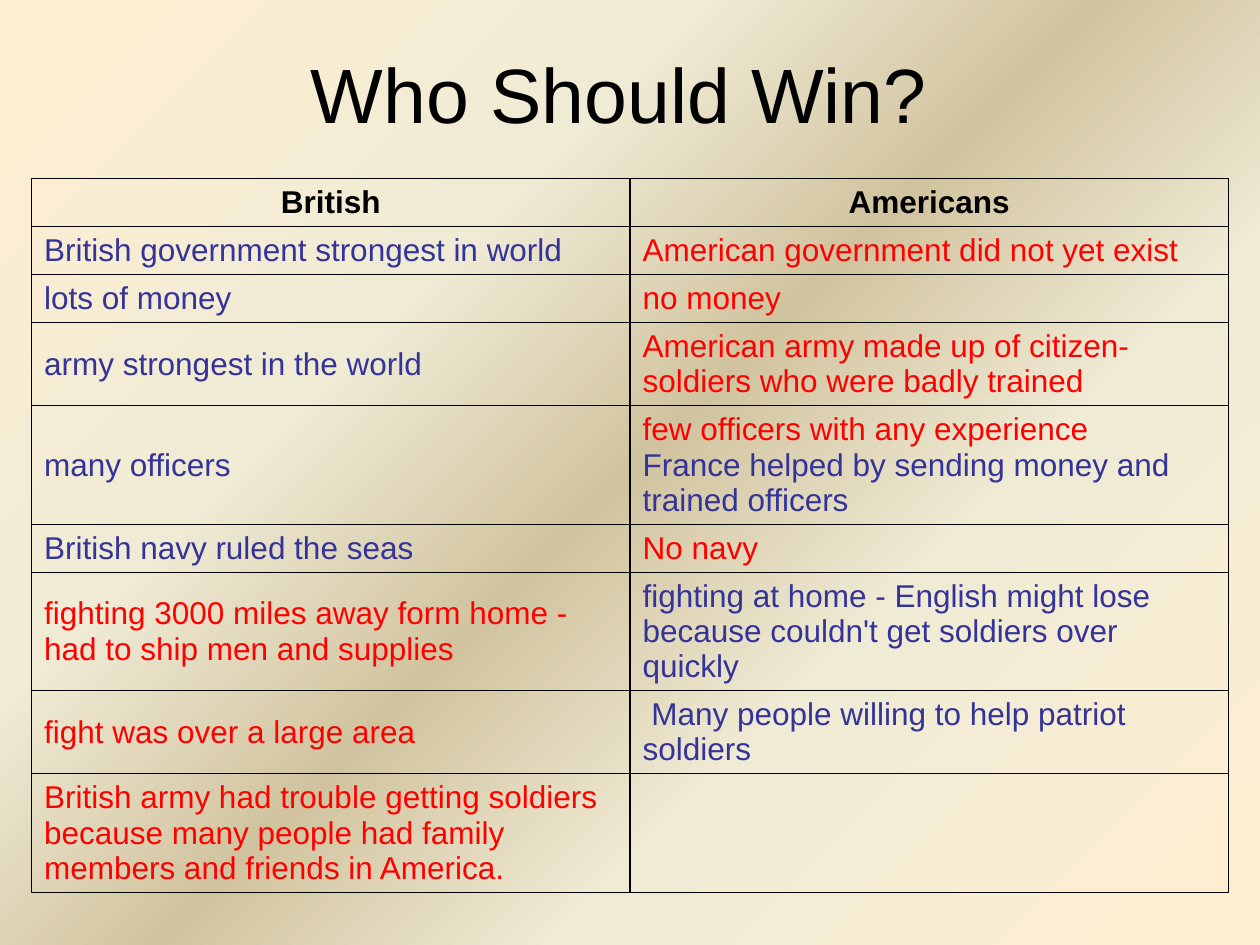
from lxml import etree
from pptx import Presentation
from pptx.dml.color import RGBColor
from pptx.enum.text import MSO_ANCHOR, PP_ALIGN
from pptx.oxml.ns import qn
from pptx.util import Inches, Pt

MIDDLE = MSO_ANCHOR.MIDDLE
CENTER = PP_ALIGN.CENTER
TITLE_ONLY = 5
FONT = "Arial"
WIDTH, HEIGHT = 10, 7.5
COLORS = {
    "black": "000000",
    "advantage": "333399",
    "drawback": "FF0000",
    "cream": "FFEFD1",
    "ivory": "F0EBD5",
    "sand": "D1C39F",
}
GRADIENT = [(0, "cream"), (32, "ivory"), (50, "sand"), (68, "ivory"), (100, "cream")]
HEADERS = ["British", "Americans"]
GOOD, BAD = ["advantage"], ["drawback"]
ROWS = [
    (1, ("British government strongest in world", GOOD),
     ("American government did not yet exist", BAD)),
    (1, ("lots of money", GOOD), ("no money", BAD)),
    (2, ("army strongest in the world", GOOD),
     ("American army made up of citizen-soldiers who were badly trained", BAD)),
    (3, ("many officers", GOOD),
     ("few officers with any experience\vFrance helped by sending money and trained officers",
      BAD + GOOD)),
    (1, ("British navy ruled the seas", GOOD), ("No navy", BAD)),
    (3, ("fighting 3000 miles away form home - had to ship men and supplies", BAD),
     ("fighting at home - English might lose because couldn't get soldiers over quickly", GOOD)),
    (2, ("fight was over a large area", BAD),
     ("\N{NO-BREAK SPACE}Many people willing to help patriot soldiers", GOOD)),
    (3, ("British army had trouble getting soldiers because many people had family "
         "members and friends in America.", BAD), ("", [])),
]


def paint_background(slide):
    slide.background.fill.gradient()
    gradient = slide.element.find(".//" + qn("a:gradFill"))
    stops = gradient.find(qn("a:gsLst"))
    for stop in list(stops):
        stops.remove(stop)
    for position, color in GRADIENT:
        stop = etree.SubElement(stops, qn("a:gs"), pos=str(position * 1000))
        etree.SubElement(stop, qn("a:srgbClr"), val=COLORS[color])
    direction = gradient.find(qn("a:lin"))
    direction.set("ang", str(45 * 60000))
    direction.set("scaled", "0")


def format_run(run, size, color, bold=False):
    run.font.name = FONT
    run.font.size = Pt(size)
    run.font.bold = bold
    run.font.color.rgb = RGBColor.from_string(COLORS[color])


def add_title(slide, text):
    title = slide.shapes.title
    title.left, title.top = Inches(0.05 * WIDTH), Inches(0.04 * HEIGHT)
    title.width, title.height = Inches(0.9 * WIDTH), Inches(0.87)
    title.text_frame.text = text
    title.text_frame.vertical_anchor = MIDDLE
    paragraph = title.text_frame.paragraphs[0]
    paragraph.alignment = CENTER
    format_run(paragraph.runs[0], 44, "black")


def add_borders(cell):
    properties = cell._tc.get_or_add_tcPr()
    for side in ("lnL", "lnR", "lnT", "lnB"):
        line = etree.SubElement(properties, qn("a:" + side), w=str(Pt(0.75)))
        fill = etree.SubElement(line, qn("a:solidFill"))
        etree.SubElement(fill, qn("a:srgbClr"), val=COLORS["black"])


def fill_cell(cell, text, colors, header=False):
    add_borders(cell)
    cell.fill.background()
    cell.vertical_anchor = MIDDLE
    paragraph = cell.text_frame.paragraphs[0]
    paragraph.text = text
    if header:
        paragraph.alignment = CENTER
    for run, color in zip(paragraph.runs, colors):
        format_run(run, 18, color, header)


def add_comparison(slide):
    header = (1, *((name, ["black"]) for name in HEADERS))
    rows = [header] + ROWS
    heights = [Inches(0.1 + 0.28 * lines) for lines, *_ in rows]
    frame = slide.shapes.add_table(
        len(rows), len(HEADERS), Inches(0.025 * WIDTH), Inches(1.42),
        Inches(0.95 * WIDTH), sum(heights))
    table = frame.table
    table.first_row = False
    table.horz_banding = False
    for row_index, (_, *entries) in enumerate(rows):
        table.rows[row_index].height = heights[row_index]
        for column_index, (text, colors) in enumerate(entries):
            fill_cell(table.cell(row_index, column_index), text, colors, row_index == 0)


def main():
    presentation = Presentation()
    presentation.slide_width = Inches(WIDTH)
    presentation.slide_height = Inches(HEIGHT)
    slide = presentation.slides.add_slide(presentation.slide_layouts[TITLE_ONLY])
    paint_background(slide)
    add_title(slide, "Who Should Win? ")
    add_comparison(slide)
    presentation.save("out.pptx")


if __name__ == "__main__":
    main()
